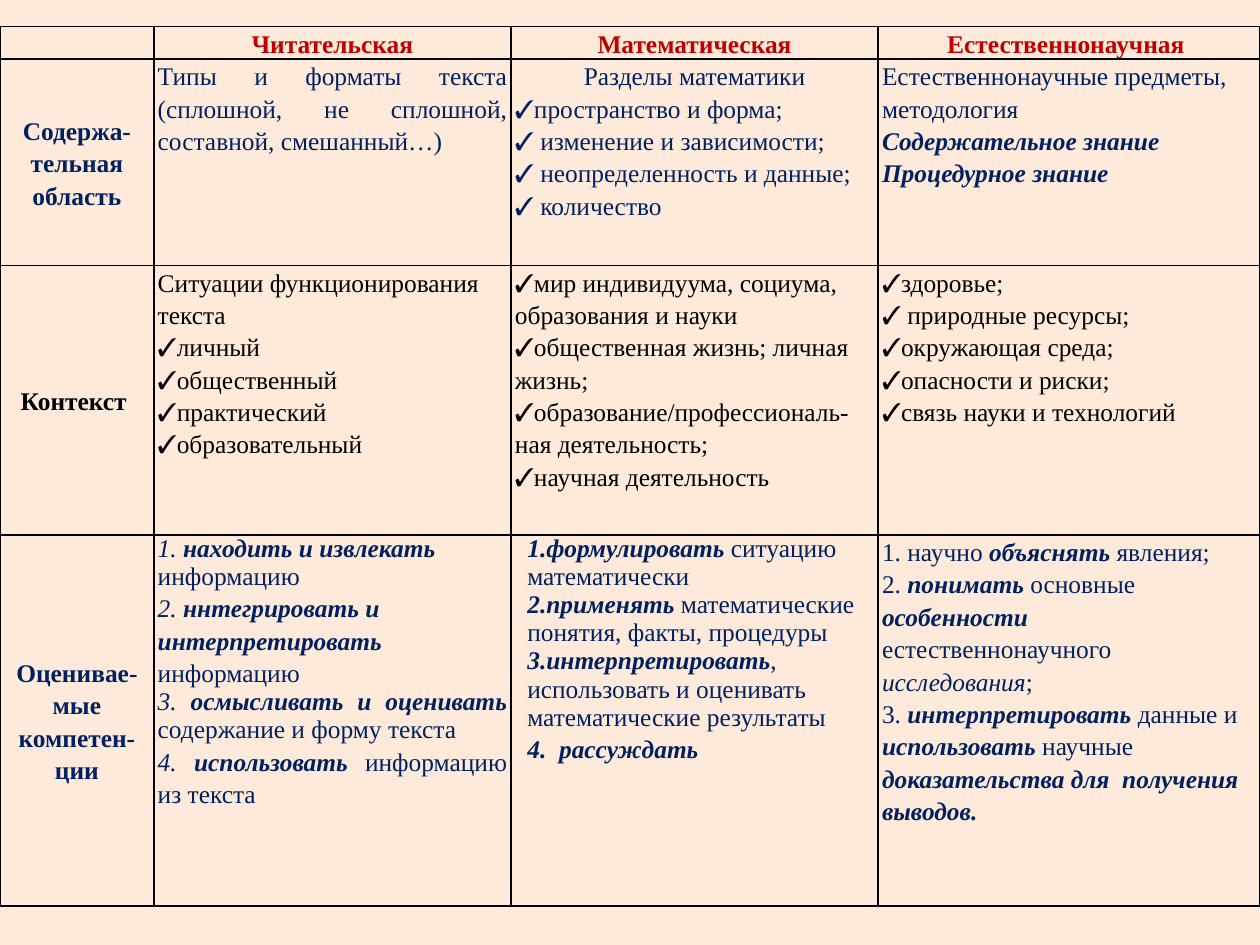
from dataclasses import dataclass

from lxml import etree
from pptx import Presentation
from pptx.dml.color import RGBColor
from pptx.enum.text import MSO_ANCHOR, PP_ALIGN
from pptx.oxml.ns import qn
from pptx.util import Cm, Pt

LEFT, CENTER, JUSTIFY = PP_ALIGN.LEFT, PP_ALIGN.CENTER, PP_ALIGN.JUSTIFY
TOP, MIDDLE = MSO_ANCHOR.TOP, MSO_ANCHOR.MIDDLE
CHECK, NUMBER = "✓", "arabicPeriod"
PLAIN, BOLD, ITALIC, BOTH = (False, False), (True, False), (False, True), (True, True)


@dataclass(frozen=True)
class Theme:
    """Colours, type and line measures of the slide."""
    paper: RGBColor = RGBColor.from_string("FDEADA")
    red: RGBColor = RGBColor.from_string("C00000")
    navy: RGBColor = RGBColor.from_string("002060")
    black: RGBColor = RGBColor.from_string("000000")
    font: str = "Times New Roman"
    size: Pt = Pt(14.5)
    border: Pt = Pt(1)
    padding: Cm = Cm(0.08)
    spacing: float = 1.15


@dataclass
class Line:
    """One paragraph: styled spans, alignment, spacing, bullet and indent."""
    spans: list
    align: PP_ALIGN = LEFT
    spacing: float = Theme.spacing
    mark: str = ""
    indent: float = 0


THEME = Theme()
COLUMNS = [3.1, 7.2, 7.4, 7.7]
ROWS = [0.66, 4.16, 5.43, 7.48]
HEADINGS = ["Читательская", "Математическая", "Естественнонаучная "]


def text(words, style=PLAIN, **options):
    """Make a paragraph that has a single style."""
    return Line([(words, style)], **options)


def checks(*items, align=LEFT):
    """Make a list of ticked paragraphs."""
    return [text(item, align=align, mark=CHECK) for item in items]


def numbered(*spans):
    """Make an indented, automatically numbered paragraph."""
    return Line(list(spans), spacing=1.0, mark=NUMBER, indent=0.25)


CONTENT = [
    ("Содержа-тельная область", THEME.navy, [
        [text("Типы и форматы текста (сплошной, не сплошной, составной, смешанный…)",
              align=JUSTIFY)],
        [text("Разделы математики", align=CENTER),
         *checks("пространство и форма;", " изменение и зависимости;",
                 " неопределенность и данные;", " количество", align=JUSTIFY)],
        [text("Естественнонаучные предметы, методология"),
         text("Содержательное знание ", BOTH, align=JUSTIFY),
         text("Процедурное знание", BOTH)],
    ]),
    ("Контекст ", THEME.black, [
        [text("Ситуации функционирования текста"),
         *checks("личный", "общественный", "практический", "образовательный")],
        checks("мир индивидуума, социума, образования и науки",
               "общественная жизнь; личная жизнь;",
               "образование/профессиональ-ная деятельность;",
               "научная деятельность"),
        checks("здоровье;", " природные ресурсы;", "окружающая среда;",
               "опасности и риски;", "связь науки и технологий"),
    ]),
    ("Оценивае-мые компетен-ции", THEME.navy, [
        [Line([("1. ", ITALIC), ("находить и извлекать ", BOTH),
               ("информацию", PLAIN)], spacing=1.0),
         Line([("2. ", ITALIC), ("ннтегрировать и интерпретировать ", BOTH),
               ("информацию", PLAIN)]),
         Line([("3. ", ITALIC), ("осмысливать и оценивать ", BOTH),
               ("содержание и форму текста ", PLAIN)], JUSTIFY, 1.0),
         Line([("4. ", ITALIC), ("использовать ", BOTH),
               ("информацию из текста", PLAIN)], JUSTIFY)],
        [numbered(("формулировать ", BOTH), ("ситуацию математически", PLAIN)),
         numbered(("применять ", BOTH),
                  ("математические понятия, факты, процедуры", PLAIN)),
         numbered(("интерпретировать", BOTH),
                  (", использовать и оценивать математические результаты", PLAIN)),
         text("4.  рассуждать", BOTH, align=JUSTIFY, indent=0.25)],
        [Line([("1. научно ", PLAIN), ("объяснять", BOTH), (" явления;", PLAIN)]),
         Line([("2. ", PLAIN), ("понимать", BOTH), (" основные ", PLAIN),
               ("особенности", BOTH), (" естественнонаучного ", PLAIN),
               ("исследования", ITALIC), (";", PLAIN)]),
         Line([("3. ", PLAIN), ("интерпретировать", BOTH), (" данные и ", PLAIN),
               ("использовать", BOTH), (" научные ", PLAIN),
               ("доказательства для  получения выводов.", BOTH)])],
    ]),
]


def add_mark(para, line):
    """Set the indent and the tick or number of a paragraph."""
    properties = para._p.get_or_add_pPr()
    properties.set("marL", str(Cm(line.indent)))
    properties.set("indent", "0")
    if line.mark == NUMBER:
        etree.SubElement(properties, qn("a:buAutoNum"), type=NUMBER)
    elif line.mark:
        etree.SubElement(properties, qn("a:buFont"), typeface=THEME.font)
        etree.SubElement(properties, qn("a:buChar"), char=line.mark)
    else:
        etree.SubElement(properties, qn("a:buNone"))


def style_cell(cell, anchor):
    """Give a cell its borders, padding and clear fill."""
    properties = cell._tc.get_or_add_tcPr()
    for side in ("lnL", "lnR", "lnT", "lnB"):
        edge = etree.SubElement(properties, qn(f"a:{side}"), w=str(THEME.border))
        fill = etree.SubElement(edge, qn("a:solidFill"))
        etree.SubElement(fill, qn("a:srgbClr"), val=str(THEME.black))
    cell.fill.background()
    cell.margin_left = cell.margin_right = THEME.padding
    cell.margin_top = cell.margin_bottom = 0
    cell.vertical_anchor = anchor


def write_cell(cell, lines, color, anchor=TOP):
    """Style a cell and write its paragraphs."""
    style_cell(cell, anchor)
    frame = cell.text_frame
    for index, line in enumerate(lines):
        para = frame.add_paragraph() if index else frame.paragraphs[0]
        add_mark(para, line)
        para.alignment, para.line_spacing = line.align, line.spacing
        para.font.name, para.font.size = THEME.font, THEME.size
        para.font.color.rgb = color
        for words, (bold, italic) in line.spans:
            span = para.add_run()
            span.text = words
            span.font.bold, span.font.italic = bold, italic


def write_header(table):
    """Write the red headings and leave the corner cell empty."""
    corner = table.cell(0, 0)
    style_cell(corner, TOP)
    etree.SubElement(corner.text_frame.paragraphs[0]._p, qn("a:endParaRPr"),
                     sz=str(int(THEME.size.pt * 100)))
    for column, heading in enumerate(HEADINGS, 1):
        write_cell(table.cell(0, column), [text(heading, BOLD, align=CENTER)], THEME.red)


def write_row(table, row, label, color, cells):
    """Write a row label and the three cells beside it."""
    write_cell(table.cell(row, 0), [text(label, BOLD, align=CENTER)], color, MIDDLE)
    for column, lines in enumerate(cells, 1):
        write_cell(table.cell(row, column), lines, color)


def add_literacy_table(page, left, top):
    """Place the table that compares the three kinds of literacy."""
    frame = page.shapes.add_table(len(ROWS), len(COLUMNS), left, top,
                                  Cm(sum(COLUMNS)), Cm(sum(ROWS)))
    table = frame.table
    table.first_row = table.horz_banding = False
    for column, width in zip(table.columns, COLUMNS):
        column.width = Cm(width)
    for row, height in zip(table.rows, ROWS):
        row.height = Cm(height)
    write_header(table)
    for row, (label, color, cells) in enumerate(CONTENT, 1):
        write_row(table, row, label, color, cells)


def main():
    """Build and save the deck."""
    deck = Presentation()
    deck.slide_width, deck.slide_height = Cm(25.4), Cm(19.05)
    page = deck.slides.add_slide(deck.slide_layouts[6])
    page.background.fill.solid()
    page.background.fill.fore_color.rgb = THEME.paper
    add_literacy_table(page, 0, Cm(0.53))
    deck.save("out.pptx")


if __name__ == "__main__":
    main()
